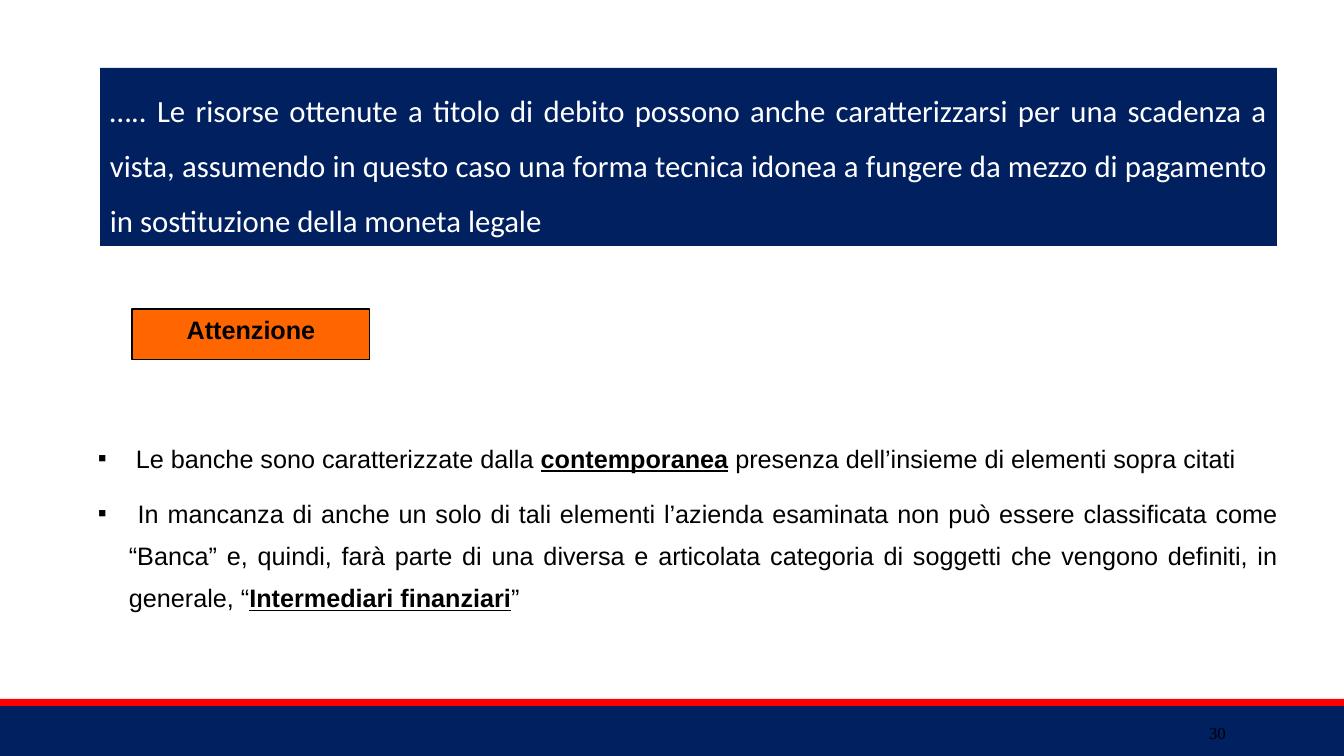
from lxml import etree
from pptx import Presentation
from pptx import util as u
from pptx.dml.color import RGBColor
from pptx.enum import shapes, text
from pptx.oxml.ns import qn

COLORS = {"navy": "002060", "red": "FF0000", "orange": "FF6600",
          "white": "FFFFFF", "black": "000000"}
PX = 914400 / 100.8
SLIDE_W, SLIDE_H = 1344, 756
FOOTER_TOP, STRIPE_H = 706, 7
INDENT = 31

# Each paragraph is a list of (text, emphasised) runs.
STATEMENT = [("….. Le risorse ottenute a titolo di debito possono anche "
              "caratterizzarsi per una scadenza a vista, assumendo in questo "
              "caso una forma tecnica idonea a fungere da mezzo di pagamento "
              "in sostituzione della moneta legale", False)]
WARNING = [("Attenzione", False)]
POINTS = [
    [(" Le banche sono caratterizzate dalla ", False),
     ("contemporanea", True),
     (" presenza dell’insieme di elementi sopra citati", False)],
    [(" In mancanza di anche un solo di tali elementi l’azienda esaminata non "
      "può essere classificata come “Banca” e, quindi, farà parte di una "
      "diversa e articolata categoria di soggetti che vengono definiti, in "
      "generale, “", False),
     ("Intermediari finanziari", True),
     ("”", False)],
]
PAGE = [("30", False)]


def px(n):
    return u.Emu(round(n * PX))


def rgb(name):
    return RGBColor.from_string(COLORS[name])


def add_box(s, x, y, w, h, fill, line=None):
    sp = s.shapes.add_shape(shapes.MSO_SHAPE.RECTANGLE, px(x), px(y), px(w), px(h))
    sp.shadow.inherit = False
    sp.fill.solid()
    sp.fill.fore_color.rgb = rgb(fill)
    if line:
        sp.line.color.rgb = rgb(line)
        sp.line.width = u.Pt(0.75)
    else:
        sp.line.fill.background()
    return sp


def add_text(s, x, y, w, h):
    return s.shapes.add_textbox(px(x), px(y), px(w), px(h))


def add_bullet(p):
    pPr = p._p.get_or_add_pPr()
    pPr.set("marL", str(px(INDENT)))
    pPr.set("indent", str(-px(INDENT)))
    etree.SubElement(pPr, qn("a:buFont"), typeface="Arial")
    etree.SubElement(pPr, qn("a:buChar"), char="▪")


def write(sp, paragraphs, size, align, font="Arial", color="black",
          spacing=1.0, bold=False, bullets=False):
    tf = sp.text_frame
    tf.word_wrap = True
    tf.vertical_anchor = text.MSO_ANCHOR.TOP
    for i, runs in enumerate(paragraphs):
        p = tf.add_paragraph() if i else tf.paragraphs[0]
        p.alignment = align
        p.line_spacing = spacing
        p.space_before = u.Pt(size / 2 if i else 0)
        if bullets:
            add_bullet(p)
        for words, emphasised in runs:
            r = p.add_run()
            r.text = words
            r.font.name = font
            r.font.size = u.Pt(size)
            r.font.color.rgb = rgb(color)
            r.font.bold = bold or emphasised
            r.font.underline = emphasised


def main():
    prs = Presentation()
    prs.slide_width, prs.slide_height = px(SLIDE_W), px(SLIDE_H)
    s = prs.slides.add_slide(prs.slide_layouts[6])
    align = text.PP_ALIGN

    add_box(s, 0, FOOTER_TOP, SLIDE_W, SLIDE_H - FOOTER_TOP, "navy")
    add_box(s, 0, FOOTER_TOP - STRIPE_H, SLIDE_W, STRIPE_H, "red")

    write(add_box(s, 100, 68, 1177, 178, "navy"), [STATEMENT], 22,
          align.JUSTIFY, font="Calibri", color="white", spacing=1.5)
    write(add_text(s, 88, 426, 1200, 197), POINTS, 18,
          align.JUSTIFY, spacing=1.4, bullets=True)
    write(add_box(s, 132, 309, 238, 51, "orange", line="black"), [WARNING], 18,
          align.CENTER, bold=True)
    write(add_text(s, 1186, 718, 63, 30), [PAGE], 12,
          align.CENTER, font="Times New Roman")

    prs.save("out.pptx")


if __name__ == "__main__":
    main()
